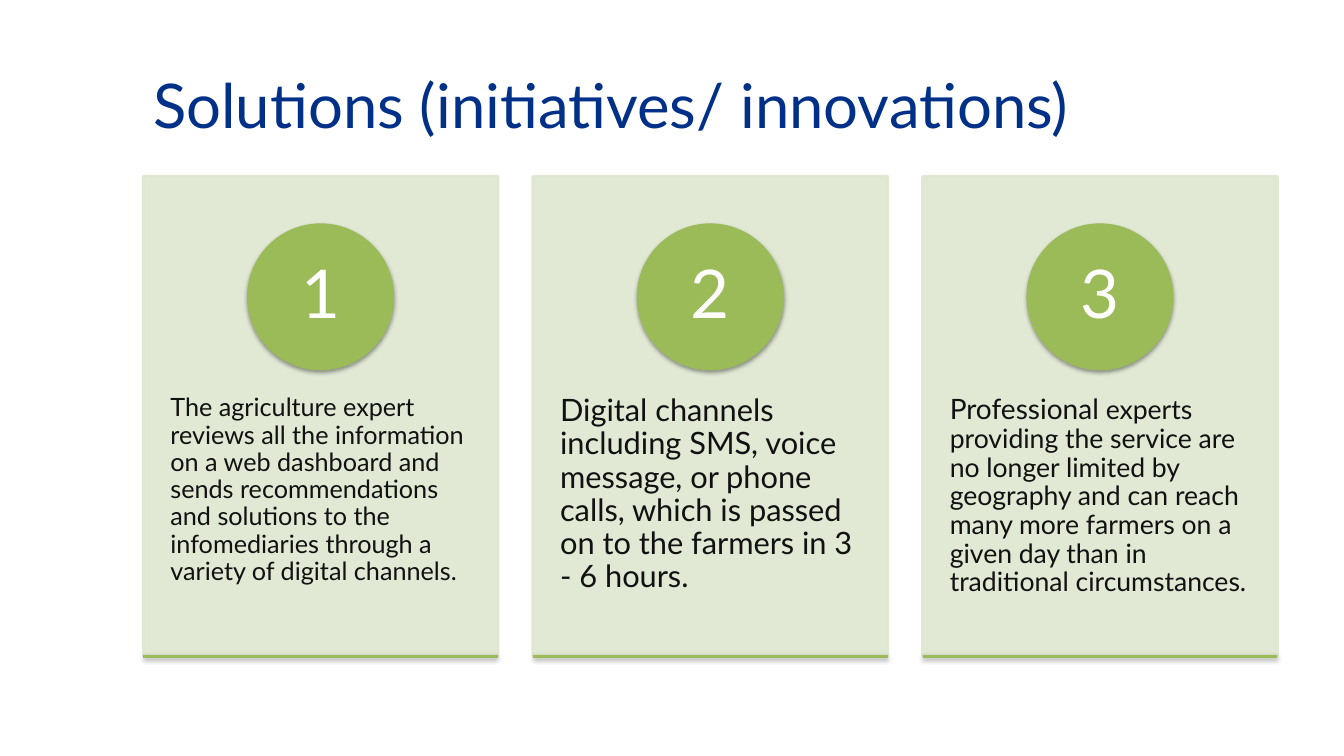
from lxml import etree
from pptx import Presentation, util as u
from pptx.dml.color import RGBColor
from pptx.enum import shapes, text
from pptx.oxml import ns

PX = 9144  # EMU per px, 100 px to the inch

NAVY = RGBColor(0x00, 0x30, 0x87)
GREEN = RGBColor(0x9B, 0xBB, 0x59)
PALE = RGBColor(0xDE, 0xE7, 0xD1)
INK = RGBColor(0x11, 0x11, 0x11)
WHITE = RGBColor(0xFF, 0xFF, 0xFF)

FONT = "Lato"
CARD_LEFT, CARD_TOP, CARD_W, CARD_H = 142, 175, 352, 476
CARD_STEP = 386.5
CIRCLE_TOP, CIRCLE = 223, 143
BODY_TOP, BODY_H = 356, 285

# Each card is a list of (text, size) runs
CARDS = [
    [("The agriculture expert reviews all the information on a web dashboard "
      "and sends recommendations and solutions to the infomediaries through "
      "a variety of digital channels.", 18)],
    [("Digital channels including SMS, voice message, or phone calls, "
      "which is passed on to the farmers in 3 - 6 hours.", 22)],
    [("Professional", 20),
     (" experts providing the service are no longer limited by geography and "
      "can reach many more farmers on a given day than in traditional "
      "circumstances.", 19)],
]


def box(x, y, w, h):
    return [u.Emu(round(v * PX)) for v in (x, y, w, h)]


def write(s, runs, color, inset=(10, 5), anchor=text.MSO_ANCHOR.TOP,
          align=text.PP_ALIGN.LEFT, spacing=1.0):
    tf = s.text_frame
    tf.word_wrap = True
    tf.vertical_anchor = anchor
    tf.margin_left = tf.margin_right = inset[0] * PX
    tf.margin_top = tf.margin_bottom = inset[1] * PX
    p = tf.paragraphs[0]
    p.alignment = align
    p.line_spacing = spacing
    for words, size in runs:
        r = p.add_run()
        r.text = words
        r.font.name = FONT
        r.font.size = u.Pt(size)
        r.font.color.rgb = color


def add_text(sl, x, y, w, h, runs, color, **fmt):
    write(sl.shapes.add_textbox(*box(x, y, w, h)), runs, color, **fmt)


def add_filled(sl, kind, x, y, w, h, color):
    s = sl.shapes.add_shape(kind, *box(x, y, w, h))
    s.shadow.inherit = False
    s.fill.solid()
    s.fill.fore_color.rgb = color
    s.line.color.rgb = color
    s.line.width = u.Pt(2)
    return s


def set_alpha(s, percent):
    for clr in s._element.spPr.iter(ns.qn("a:srgbClr")):
        etree.SubElement(clr, ns.qn("a:alpha"), val=str(percent * 1000))


def add_shadow(s):
    spPr = s._element.spPr
    effects = spPr.find(ns.qn("a:effectLst"))
    if effects is None:
        effects = etree.SubElement(spPr, ns.qn("a:effectLst"))
    shadow = etree.SubElement(effects, ns.qn("a:outerShdw"), blurRad="40000",
                              dist="20000", dir="5400000", rotWithShape="0")
    clr = etree.SubElement(shadow, ns.qn("a:srgbClr"), val="000000")
    etree.SubElement(clr, ns.qn("a:alpha"), val="38000")


def add_rule(sl, x, y, w):
    left, top, right, bottom = box(x, y, x + w, y)
    s = sl.shapes.add_connector(shapes.MSO_CONNECTOR.STRAIGHT,
                                left, top, right, bottom)
    s.line.color.rgb = GREEN
    s.line.width = u.Pt(2)
    add_shadow(s)


def add_card(sl, x, number, runs):
    # Panel and its text
    panel = add_filled(sl, shapes.MSO_SHAPE.RECTANGLE,
                       x, CARD_TOP, CARD_W, CARD_H, PALE)
    set_alpha(panel, 90)
    add_text(sl, x, BODY_TOP, CARD_W, BODY_H, runs, INK,
             inset=(27, 36), spacing=0.9)

    # Numbered circle
    circle = add_filled(sl, shapes.MSO_SHAPE.OVAL, x + (CARD_W - CIRCLE) / 2,
                        CIRCLE_TOP, CIRCLE, CIRCLE, GREEN)
    add_shadow(circle)
    write(circle, [(str(number), 48)], WHITE, inset=(11, 1), spacing=0.9,
          anchor=text.MSO_ANCHOR.MIDDLE, align=text.PP_ALIGN.CENTER)

    # Base line
    add_rule(sl, x, CARD_TOP + CARD_H, CARD_W)


def main():
    prs = Presentation()
    prs.slide_width, prs.slide_height = box(0, 0, 1333, 750)[2:]
    sl = prs.slides.add_slide(prs.slide_layouts[6])

    # Title
    add_text(sl, 142, 52, 1125, 103,
             [("Solutions (initiatives/ innovations)", 44)], NAVY,
             anchor=text.MSO_ANCHOR.MIDDLE)

    # Three cards
    for i, runs in enumerate(CARDS):
        add_card(sl, CARD_LEFT + i * CARD_STEP, i + 1, runs)

    prs.save("out.pptx")


if __name__ == "__main__":
    main()
